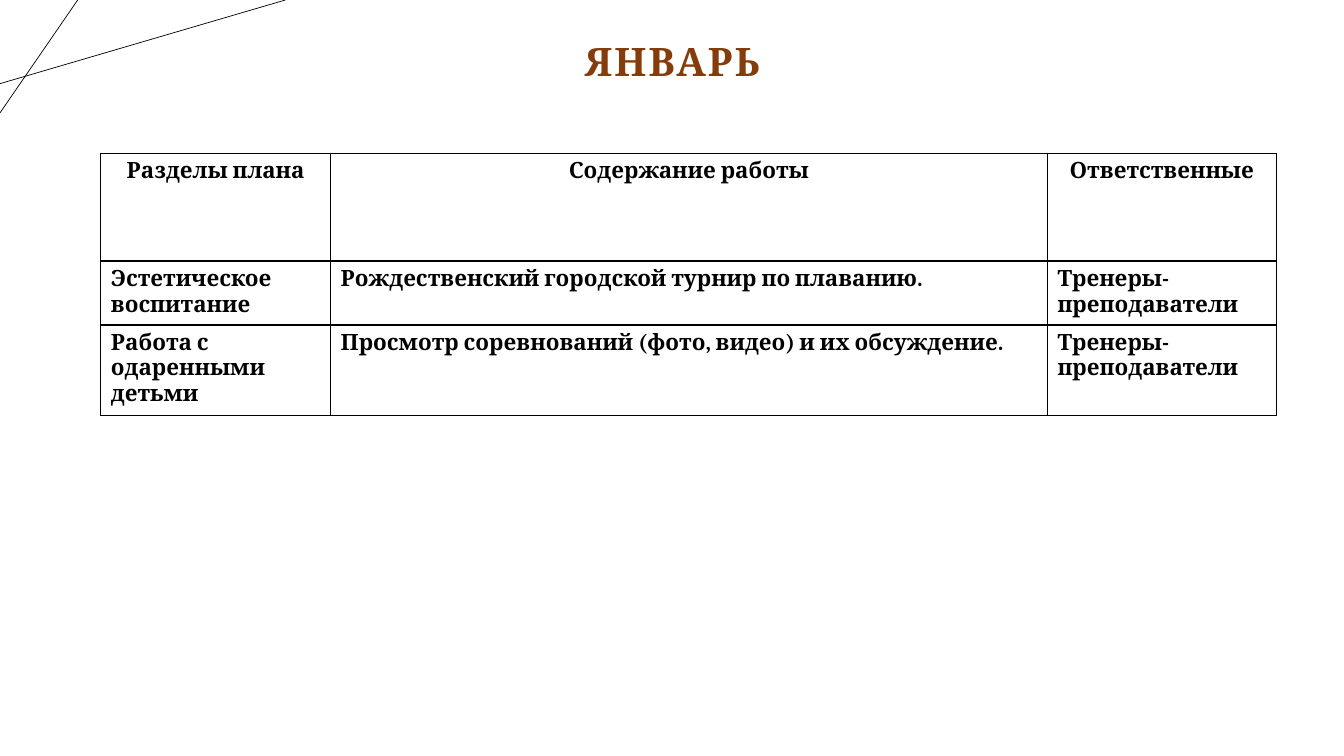
import pptx
import pptx.util
import pptx.dml.color
import pptx.enum.shapes
import pptx.enum.text
import pptx.oxml
import pptx.oxml.ns
import lxml.etree

ALIGN = pptx.enum.text.PP_ALIGN


def rgb(code):
    return pptx.dml.color.RGBColor.from_string(code)


class PlanSlide:
    """Style and current slide; lengths are percent of slide width or height."""

    font = "Cambria"
    ink = "000000"
    accent = "843C0B"

    def __init__(self, prs):
        self.prs = prs
        self.s = prs.slides.add_slide(prs.slide_layouts[6])

    def x(self, share):
        return round(self.prs.slide_width * share / 100)

    def y(self, share):
        return round(self.prs.slide_height * share / 100)

    def set_text(self, p, text, size, color, align):
        p.text = text
        p.alignment = align
        for r in p.runs:
            r.font.name = self.font
            r.font.size = pptx.util.Pt(size)
            r.font.bold = True
            r.font.color.rgb = rgb(color)

    def line(self, x1, y1, x2, y2):
        ln = self.s.shapes.add_connector(
            pptx.enum.shapes.MSO_CONNECTOR.STRAIGHT,
            self.x(x1), self.y(y1), self.x(x2), self.y(y2))
        ln.line.color.rgb = rgb(self.ink)
        ln.line.width = pptx.util.Pt(0.5)
        lxml.etree.SubElement(ln._element.spPr, pptx.oxml.ns.qn("a:effectLst"))

    def title(self, text, left, top, width, height):
        sp = self.s.shapes.add_textbox(
            self.x(left), self.y(top), self.x(width), self.y(height))
        tf = sp.text_frame
        tf.word_wrap = True
        tf.vertical_anchor = pptx.enum.text.MSO_ANCHOR.MIDDLE
        p = tf.paragraphs[0]
        self.set_text(p, text, 28, self.accent, ALIGN.CENTER)
        p.line_spacing = 0.9
        # Letter spacing in hundredths of a point
        p.runs[0]._r.get_or_add_rPr().set("spc", "150")

    def border(self, cell):
        tcPr = cell._tc.get_or_add_tcPr()
        for side in "LRTB":
            tcPr.append(pptx.oxml.parse_xml(
                f'<a:ln{side} {pptx.oxml.ns.nsdecls("a")} w="12700"><a:solidFill>'
                f'<a:srgbClr val="{self.ink}"/></a:solidFill></a:ln{side}>'))

    def table(self, rows, left, top, widths, heights):
        tbl = self.s.shapes.add_table(
            len(heights), len(widths), self.x(left), self.y(top),
            self.x(sum(widths)), self.y(sum(heights))).table
        tbl.first_row = tbl.horz_banding = False
        for col, width in zip(tbl.columns, widths):
            col.width = self.x(width)
        for i, (row, height) in enumerate(zip(tbl.rows, heights)):
            row.height = self.y(height)
            for cell, text in zip(row.cells, rows[i]):
                self.border(cell)
                cell.fill.background()
                self.set_text(cell.text_frame.paragraphs[0], text, 16, self.ink,
                              ALIGN.LEFT if i else ALIGN.CENTER)


def main():
    prs = pptx.Presentation()
    prs.slide_width = pptx.util.Inches(13.33)
    prs.slide_height = pptx.util.Inches(7.5)
    plan = PlanSlide(prs)

    # Crossing corner lines
    plan.line(0, 11.07, 21.23, 0)
    plan.line(5.78, 0, 0, 14.93)

    # Month heading
    plan.title("ЯНВАРЬ", 6.9, 3.47, 86.27, 9.87)

    # Work plan
    staff = "Тренеры-преподаватели"
    plan.table(
        [
            ["Разделы плана", "Содержание работы", "Ответственные"],
            ["Эстетическое воспитание",
             "Рождественский городской турнир по плаванию.", staff],
            ["Работа с одаренными детьми",
             "Просмотр соревнований (фото, видео) и их обсуждение.", staff],
        ],
        left=7.5, top=20.27,
        widths=[17.1, 53.34, 17.03], heights=[14.27, 8.4, 12])

    prs.save("out.pptx")


if __name__ == "__main__":
    main()
